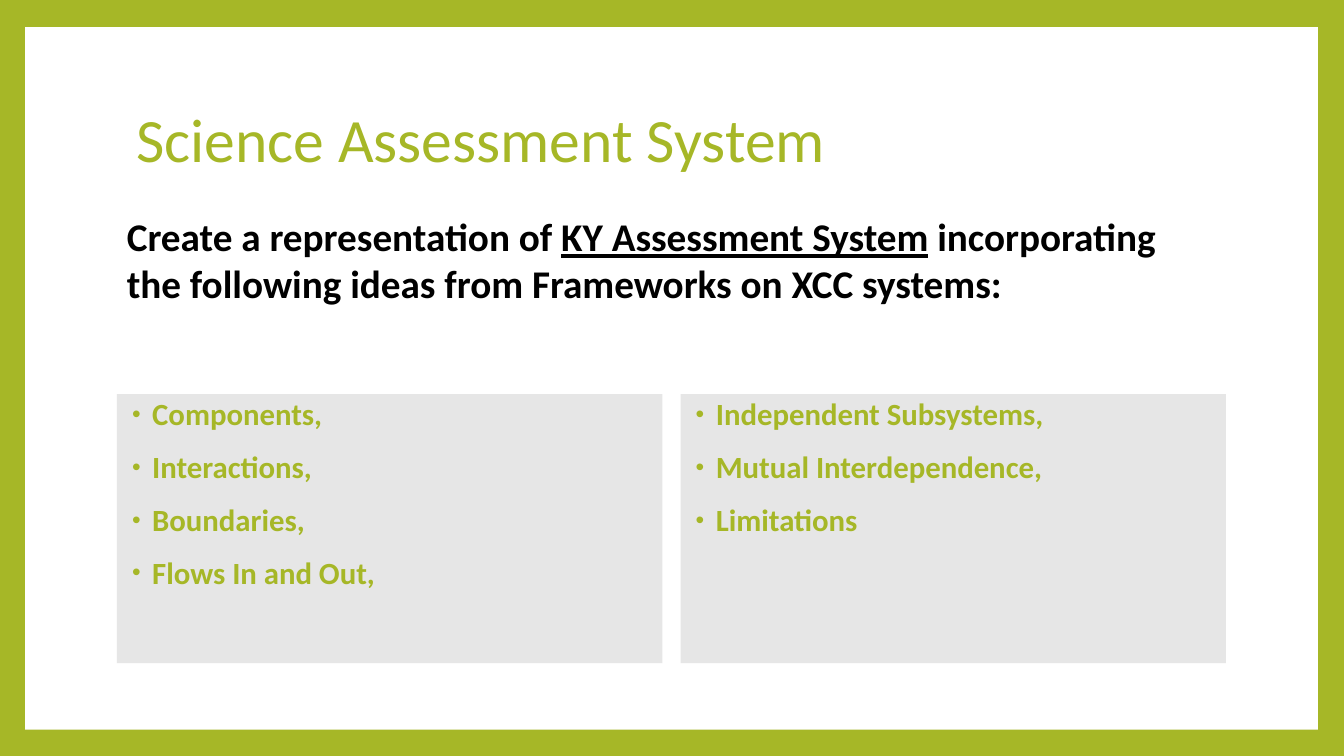
from lxml import etree
from pptx import Presentation
from pptx.dml.color import RGBColor
from pptx.enum.shapes import MSO_SHAPE
from pptx.enum.text import MSO_ANCHOR, MSO_AUTO_SIZE, PP_ALIGN
from pptx.oxml.ns import qn
from pptx.util import Inches, Pt

RECT = MSO_SHAPE.RECTANGLE
MIDDLE, TOP = MSO_ANCHOR.MIDDLE, MSO_ANCHOR.TOP
NO_FIT = MSO_AUTO_SIZE.NONE
LEFT = PP_ALIGN.LEFT
COLORS = {"green": "A6B727", "white": "FFFFFF", "gray": "E6E6E6", "black": "000000"}


def paint(fill, name):
    fill.solid()
    fill.fore_color.rgb = RGBColor.from_string(COLORS[name])


def style(run, size, color, bold=False):
    run.font.name = "Calibri"
    run.font.size = Pt(size)
    run.font.bold = bold
    run.font.color.rgb = RGBColor.from_string(COLORS[color])


deck = Presentation()
deck.slide_width, deck.slide_height = Inches(13.33), Inches(7.5)
slide = deck.slides.add_slide(deck.slide_layouts[3])

# Green frame around a white panel, behind everything else
paint(slide.background.fill, "green")
panel = slide.shapes.add_shape(RECT, Inches(0.25), Inches(0.27), Inches(12.82), Inches(6.97))
panel.shadow.inherit = False
paint(panel.fill, "white")
panel.line.fill.background()
panel.element.getparent().insert(2, panel.element)

# Title
title = slide.shapes.title
title.left, title.top = Inches(1.25), Inches(0.67)
title.width, title.height = Inches(10.8), Inches(1.48)
frame = title.text_frame
frame.text = "Science Assessment System"
frame.auto_size = NO_FIT
frame.vertical_anchor = MIDDLE
para = frame.paragraphs[0]
para.alignment = LEFT
para.line_spacing = 0.9
style(para.runs[0], 44, "green")

# Two lists of ideas
lists = [
    (1, 1.16, ["Components,", "Interactions,", "Boundaries,", "Flows In and Out,"]),
    (2, 6.75, ["Independent Subsystems,", "Mutual Interdependence,", "Limitations"]),
]
for idx, left, ideas in lists:
    body = slide.placeholders[idx]
    body.left, body.top = Inches(left), Inches(3.91)
    body.width, body.height = Inches(5.41), Inches(2.67)
    paint(body.fill, "gray")
    frame = body.text_frame
    frame.text = "\n".join(ideas)
    frame.auto_size = NO_FIT
    frame.vertical_anchor = TOP
    for para in frame.paragraphs:
        para.line_spacing = 0.9
        para.space_before = Pt(14)
        style(para.runs[0], 22, "green", True)
        # Bullet: indent, colour, size and sign
        props = para._p.get_or_add_pPr()
        props.set("marL", str(Inches(0.25)))
        props.set("indent", str(Inches(-0.2)))
        tint = etree.SubElement(props, qn("a:buClr"))
        etree.SubElement(tint, qn("a:srgbClr"), val=COLORS["green"])
        etree.SubElement(props, qn("a:buSzPct"), val="80000")
        etree.SubElement(props, qn("a:buFont"), typeface="Arial")
        etree.SubElement(props, qn("a:buChar"), char="•")

# Task
task = slide.shapes.add_textbox(Inches(1.16), Inches(2.06), Inches(10.74), Inches(1.51))
frame = task.text_frame
frame.word_wrap = True
para = frame.paragraphs[0]
parts = [
    ("Create a representation of ", False),
    ("KY Assessment System", True),
    (" incorporating the following ideas from Frameworks on XCC systems:", False),
]
for text, under in parts:
    run = para.add_run()
    run.text = text
    style(run, 28, "black", True)
    run.font.underline = under

deck.save("out.pptx")
